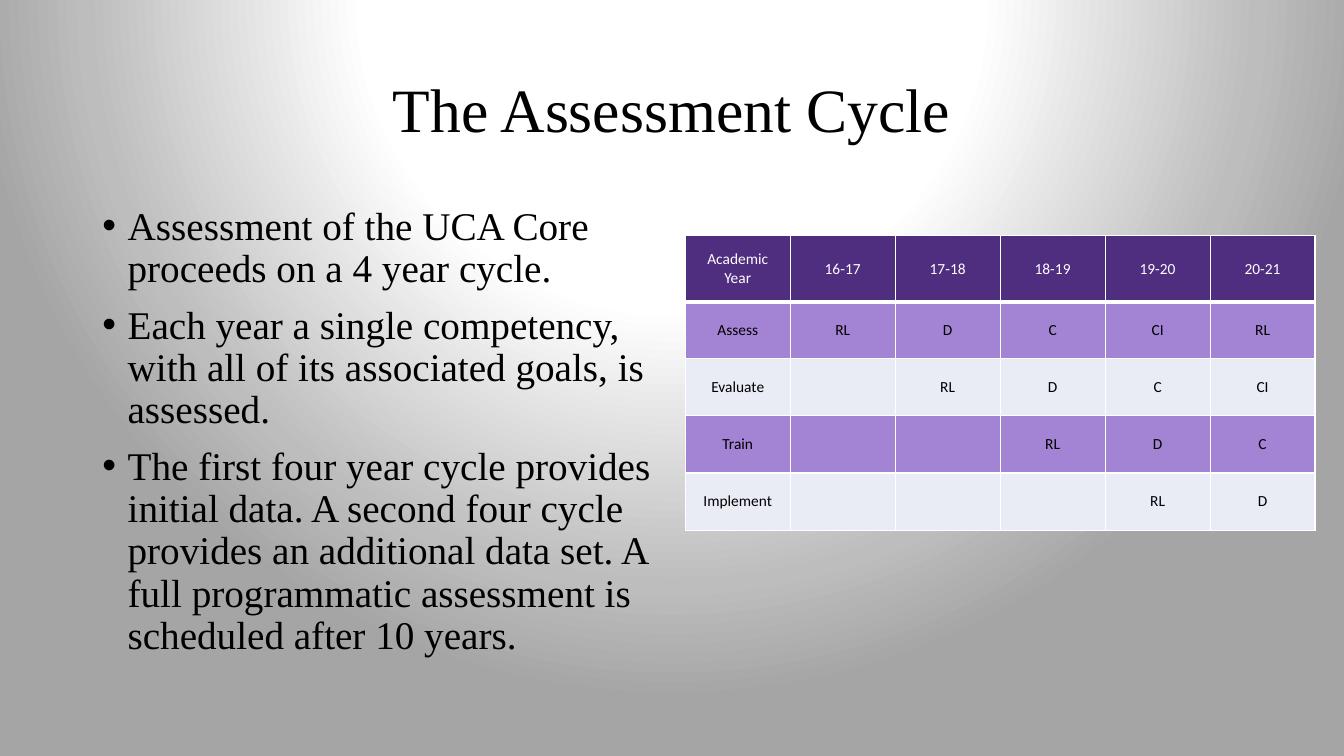
from lxml.etree import SubElement
from pptx import Presentation
from pptx.dml.color import RGBColor as Color
from pptx.enum.text import MSO_ANCHOR as Anchor, MSO_AUTO_SIZE as AutoSize, PP_ALIGN as Align
from pptx.oxml import parse_xml
from pptx.oxml.ns import nsdecls, qn
from pptx.util import Pt

COLORS = {"ink": "000000", "white": "FFFFFF", "header": "4F2D7F",
          "violet": "A383D3", "pale": "E9EBF5"}
BACKDROP_STOPS = [(0, "FFFFFF"), (40, "FFFFFF"), (76, "BDBDBD"), (91, "A5A5A5")]

BULLETS = [
    "Assessment of the UCA Core proceeds on a 4 year cycle.",
    "Each year a single competency, with all of its associated goals, is assessed.",
    "The first four year cycle provides initial data. A second four cycle provides "
    "an additional data set. A full programmatic assessment is scheduled after 10 years.",
]
YEARS = ["16-17", "17-18", "18-19", "19-20", "20-21"]
PHASES = ["Assess", "Evaluate", "Train", "Implement"]
COMPETENCIES = ["RL", "D", "C", "CI"]


class SlideBuilder:
    serif, sans = "Times New Roman", "Calibri"

    def __init__(self, deck):
        self.page = deck.slides.add_slide(deck.slide_layouts[1])

    def backdrop(self, stops):
        self.page.background.fill.solid()
        properties = self.page.background._cSld.bg.bgPr
        stop_xml = "".join(f'<a:gs pos="{position * 1000}"><a:srgbClr val="{color}"/></a:gs>'
                           for position, color in stops)
        gradient = parse_xml(
            f'<a:gradFill {nsdecls("a")} rotWithShape="1"><a:gsLst>{stop_xml}</a:gsLst>'
            '<a:path path="circle"><a:fillToRect l="50000" t="-80000" r="50000" b="180000"/>'
            '</a:path></a:gradFill>')
        properties.replace(properties.find(qn("a:solidFill")), gradient)

    def format_runs(self, para, font, size, color):
        for span in para.runs:
            span.font.name, span.font.size, span.font.bold = font, Pt(size), False
            span.font.color.rgb = Color.from_string(COLORS[color])

    def place(self, box, left, top, width, height, anchor):
        box.left, box.top, box.width, box.height = map(Pt, (left, top, width, height))
        box.text_frame.word_wrap = True
        box.text_frame.auto_size = AutoSize.NONE
        box.text_frame.vertical_anchor = anchor

    def title(self, text, *area):
        box = self.page.shapes.title
        self.place(box, *area, Anchor.MIDDLE)
        box.text_frame.text = text
        para = box.text_frame.paragraphs[0]
        para.alignment, para.line_spacing = Align.CENTER, 0.9
        self.format_runs(para, self.serif, 44, "ink")

    def bullets(self, items, *area):
        box = self.page.placeholders[1]
        self.place(box, *area, Anchor.TOP)
        box.text_frame.text = "\n".join(items)
        for index, para in enumerate(box.text_frame.paragraphs):
            para.line_spacing = 0.9
            para.space_before = Pt(10 if index else 0)
            properties = para._p.get_or_add_pPr()
            properties.set("marL", str(Pt(18)))
            properties.set("indent", str(Pt(-18)))
            SubElement(properties, qn("a:buFont")).set("typeface", "Arial")
            SubElement(properties, qn("a:buChar")).set("char", "•")
            self.format_runs(para, self.serif, 28, "ink")

    def borders(self, cell, bottom):
        properties = cell._tc.get_or_add_tcPr()
        widths = {"lnL": 1, "lnR": 1, "lnT": 1, "lnB": bottom}
        for index, (side, width) in enumerate(widths.items()):
            properties.insert(index, parse_xml(
                f'<a:{side} {nsdecls("a")} w="{Pt(width)}"><a:solidFill>'
                f'<a:srgbClr val="{COLORS["white"]}"/></a:solidFill></a:{side}>'))

    def table(self, rows, left, top, column_width, header_height, row_height):
        width = column_width * len(rows[0])
        height = header_height + row_height * (len(rows) - 1)
        grid = self.page.shapes.add_table(len(rows), len(rows[0]), Pt(left), Pt(top),
                                          Pt(width), Pt(height)).table
        for column in grid.columns:
            column.width = Pt(column_width)
        for row_index, texts in enumerate(rows):
            header = row_index == 0
            fill = "header" if header else "violet" if row_index % 2 else "pale"
            grid.rows[row_index].height = Pt(header_height if header else row_height)
            for cell, text in zip(grid.rows[row_index].cells, texts):
                cell.fill.solid()
                cell.fill.fore_color.rgb = Color.from_string(COLORS[fill])
                self.borders(cell, bottom=3 if header else 1)
                cell.vertical_anchor = Anchor.MIDDLE
                cell.text_frame.text = text
                para = cell.text_frame.paragraphs[0]
                para.alignment = Align.CENTER
                self.format_runs(para, self.sans, 11, "white" if header else "ink")


def cycle_rows():
    """Each phase starts one year after the phase above it."""
    rows = [["Academic Year"] + YEARS]
    for delay, phase in enumerate(PHASES):
        rows.append([phase] + [COMPETENCIES[(year - delay) % len(COMPETENCIES)]
                               if year >= delay else "" for year in range(len(YEARS))])
    return rows


def main():
    deck = Presentation()
    deck.slide_width, deck.slide_height = Pt(960), Pt(540)
    builder = SlideBuilder(deck)
    # Background
    builder.backdrop(BACKDROP_STOPS)
    # Title and list
    builder.title("The Assessment Cycle", 66, 28, 828, 105)
    builder.bullets(BULLETS, 66, 144, 408, 343)
    # Assessment schedule
    builder.table(cycle_rows(), left=489.5, top=168.5, column_width=75,
                  header_height=47, row_height=40.8)
    deck.save("out.pptx")


if __name__ == "__main__":
    main()
